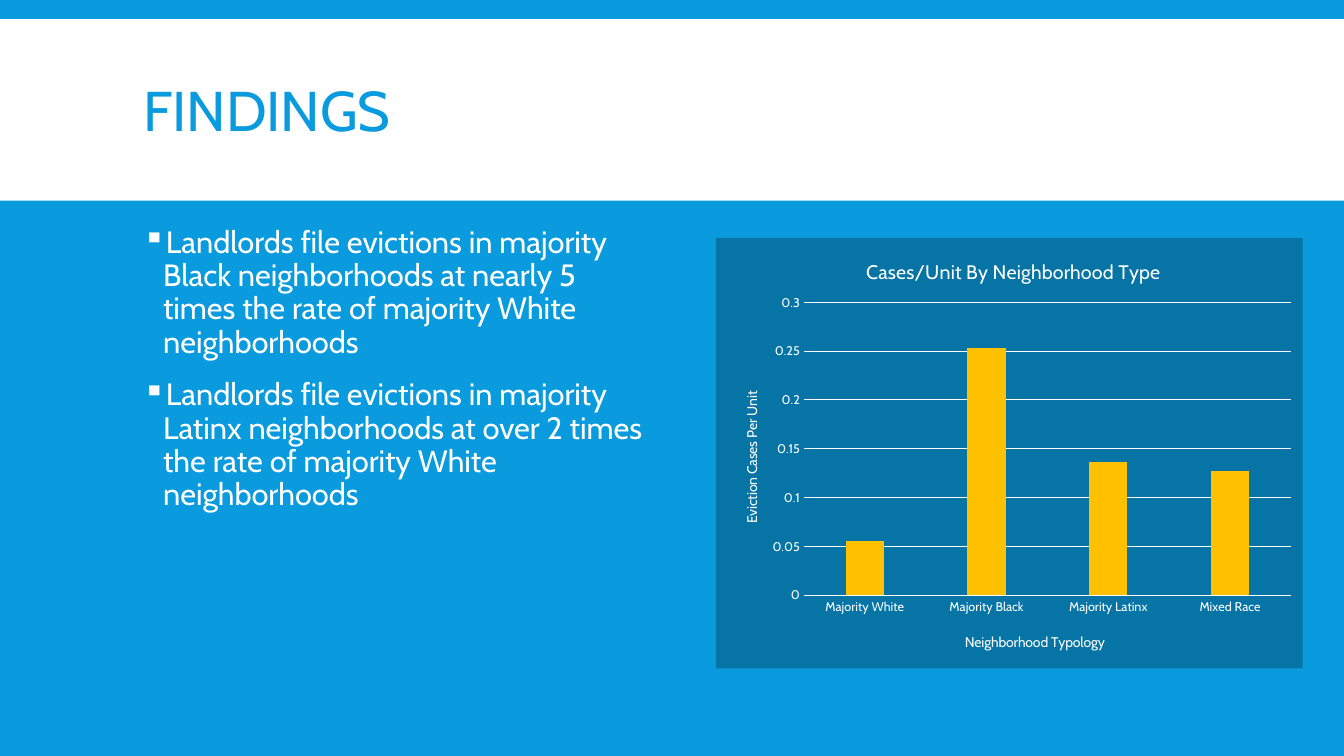
from dataclasses import dataclass

from lxml.etree import SubElement
from pptx import Presentation
from pptx.chart.data import CategoryChartData
from pptx.dml.color import RGBColor
from pptx.enum.chart import XL_CHART_TYPE, XL_TICK_MARK
from pptx.enum.shapes import MSO_SHAPE
from pptx.enum.text import MSO_ANCHOR, PP_ALIGN
from pptx.oxml import parse_xml
from pptx.oxml.ns import nsdecls, qn
from pptx.util import Inches, Pt


@dataclass(frozen=True)
class Theme:
    font: str = "Cabin"
    blue: str = "099BDD"
    panel: str = "0774A6"
    white: str = "FFFFFF"
    gold: str = "FFC000"
    title_size: int = 40
    body_size: int = 22
    chart_title_size: int = 14
    axis_title_size: int = 10
    tick_size: int = 9
    line_width: float = 0.75


THEME = Theme()
FINDINGS = [
    "Landlords file evictions in majority Black neighborhoods at nearly 5 times "
    "the rate of majority White neighborhoods",
    "Landlords file evictions in majority Latinx neighborhoods at over 2 times "
    "the rate of majority White neighborhoods",
]
CASES_PER_UNIT = {
    "Majority White": 0.055,
    "Majority Black": 0.253,
    "Majority Latinx": 0.136,
    "Mixed Race": 0.127,
}


def color(value):
    return RGBColor.from_string(value)


def style_font(font, size, value):
    font.name = THEME.font
    font.size = Pt(size)
    font.bold = False
    font.color.rgb = color(value)


def paint(fill, value):
    fill.solid()
    fill.fore_color.rgb = color(value)


def add_title(slide, text):
    title = slide.shapes.title
    title.left, title.top = Inches(1.32), Inches(0.31)
    title.width, title.height = Inches(10.7), Inches(1.65)
    frame = title.text_frame
    frame.text = text
    frame.vertical_anchor = MSO_ANCHOR.MIDDLE
    para = frame.paragraphs[0]
    para.alignment = PP_ALIGN.LEFT
    para.line_spacing = 0.85
    style_font(para.runs[0].font, THEME.title_size, THEME.blue)


def add_title_band(slide):
    band = slide.shapes.add_shape(
        MSO_SHAPE.RECTANGLE, Inches(0), Inches(0.19), Inches(13.33), Inches(1.8)
    )
    band.shadow.inherit = False
    paint(band.fill, THEME.white)
    band.line.fill.background()
    slide.shapes.title.element.addprevious(band.element)


def add_bullet(para):
    properties = para._p.get_or_add_pPr()
    indent = Inches(0.2)
    properties.set("marL", str(indent))
    properties.set("indent", str(-indent))
    bullet_color = SubElement(properties, qn("a:buClr"))
    SubElement(bullet_color, qn("a:srgbClr"), val=THEME.white)
    SubElement(properties, qn("a:buChar"), char="▪")


def add_bullet_list(slide, items):
    box = slide.shapes.add_textbox(Inches(1.32), Inches(2.2), Inches(5.2), Inches(4.6))
    frame = box.text_frame
    frame.word_wrap = True
    frame.text = "\n".join(items)
    for para in frame.paragraphs:
        para.line_spacing = 0.9
        para.space_before = Pt(12)
        para.space_after = Pt(2)
        add_bullet(para)
        style_font(para.runs[0].font, THEME.body_size, THEME.white)


def manual_layout(x, y, size=""):
    return parse_xml(
        f'<c:layout {nsdecls("c")}><c:manualLayout>{"<c:layoutTarget val=%r/>" % "inner" if size else ""}'
        f'<c:xMode val="edge"/><c:yMode val="edge"/>'
        f'<c:x val="{x}"/><c:y val="{y}"/>{size}</c:manualLayout></c:layout>'
    )


def remove_layout(element):
    for layout in element.findall(qn("c:layout")):
        element.remove(layout)


def set_chart_title(title, text, size, x, y, rotation=0):
    frame = title.text_frame
    frame.text = text
    style_font(frame.paragraphs[0].runs[0].font, size, THEME.white)
    body = title.element.find(".//" + qn("a:bodyPr"))
    body.set("rot", str(rotation * 60000))
    body.set("vert", "horz")
    remove_layout(title.element)
    title.element.find(qn("c:tx")).addnext(manual_layout(x, y))


def style_axis(axis):
    axis.major_tick_mark = XL_TICK_MARK.NONE
    axis.minor_tick_mark = XL_TICK_MARK.NONE
    style_font(axis.tick_labels.font, THEME.tick_size, THEME.white)


def style_line(line):
    line.color.rgb = color(THEME.white)
    line.width = Pt(THEME.line_width)


def set_chart_area(chart):
    plot_area = chart.element.find(".//" + qn("c:plotArea"))
    remove_layout(plot_area)
    plot_area.insert(0, manual_layout(0.15, 0.15, '<c:w val="0.83"/><c:h val="0.68"/>'))
    chart.element.find(qn("c:chart")).addnext(parse_xml(
        f'<c:spPr {nsdecls("c", "a")}><a:solidFill><a:srgbClr val="{THEME.panel}"/>'
        "</a:solidFill><a:ln><a:noFill/></a:ln></c:spPr>"
    ))


def add_rate_chart(slide, rates):
    chart_data = CategoryChartData()
    chart_data.categories = list(rates)
    chart_data.add_series("Series 1", list(rates.values()))
    chart = slide.shapes.add_chart(
        XL_CHART_TYPE.COLUMN_CLUSTERED,
        Inches(7.1), Inches(2.36), Inches(5.82), Inches(4.27), chart_data,
    ).chart
    style_font(chart.font, THEME.axis_title_size, THEME.white)
    chart.has_legend = False
    set_chart_title(chart.chart_title, "Cases/Unit By Neighborhood Type",
                    THEME.chart_title_size, 0.25, 0.04)
    category_axis, value_axis = chart.category_axis, chart.value_axis
    set_chart_title(category_axis.axis_title, "Neighborhood Typology",
                    THEME.axis_title_size, 0.42, 0.91)
    set_chart_title(value_axis.axis_title, "Eviction Cases Per Unit",
                    THEME.axis_title_size, 0.04, 0.35, -90)
    style_axis(category_axis)
    style_axis(value_axis)
    style_line(category_axis.format.line)
    style_line(value_axis.major_gridlines.format.line)
    value_axis.format.line.fill.background()
    value_axis.minimum_scale, value_axis.maximum_scale = 0, 0.3
    value_axis.major_unit = 0.05
    plot = chart.plots[0]
    plot.vary_by_categories = False
    plot.gap_width = 219
    plot.overlap = -27
    paint(plot.series[0].format.fill, THEME.gold)
    set_chart_area(chart)


def main():
    deck = Presentation()
    deck.slide_width, deck.slide_height = Inches(13.33), Inches(7.5)
    slide = deck.slides.add_slide(deck.slide_layouts[5])
    paint(slide.background.fill, THEME.blue)
    add_title(slide, "FINDINGS")
    add_title_band(slide)
    add_bullet_list(slide, FINDINGS)
    add_rate_chart(slide, CASES_PER_UNIT)
    deck.save("out.pptx")


if __name__ == "__main__":
    main()
